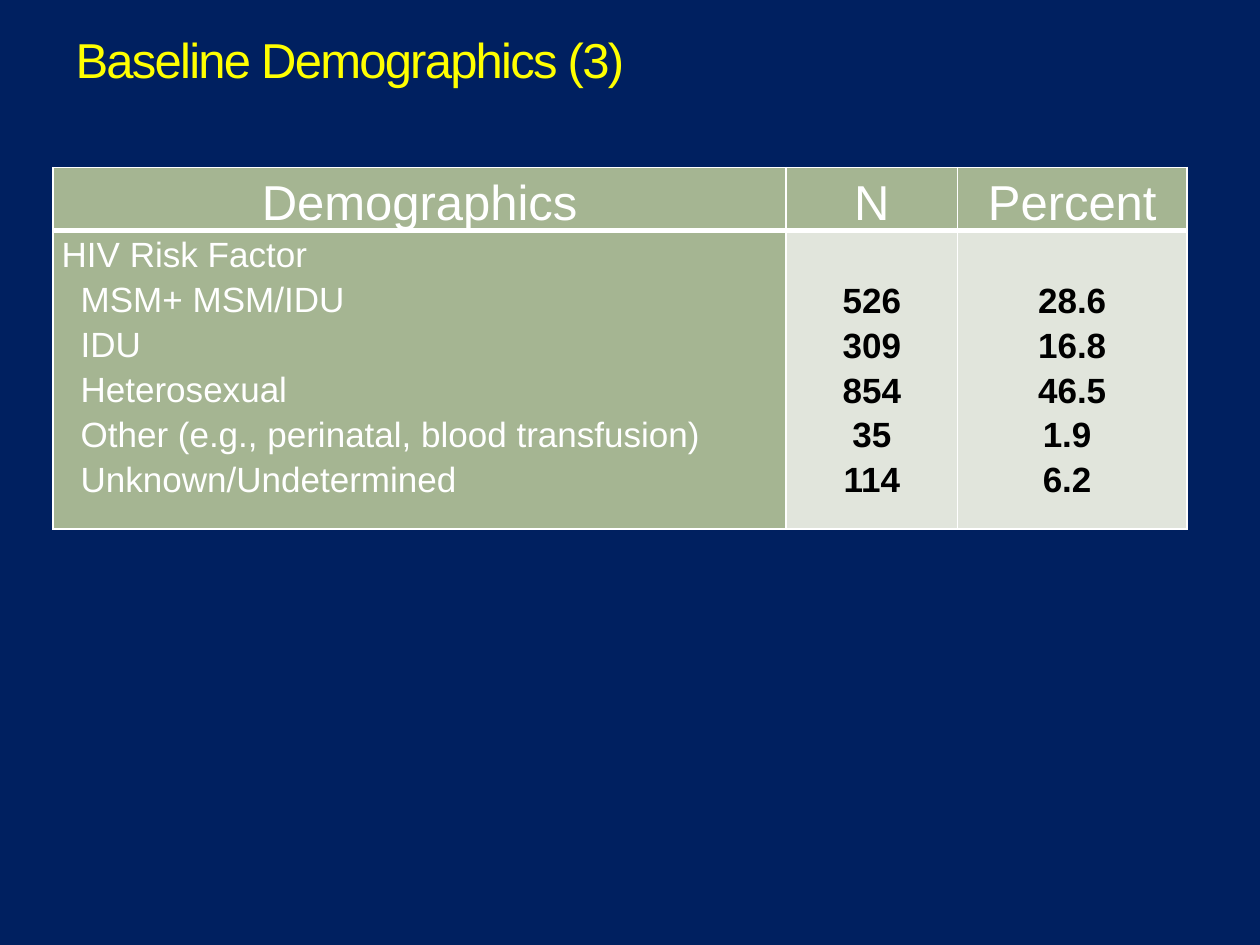
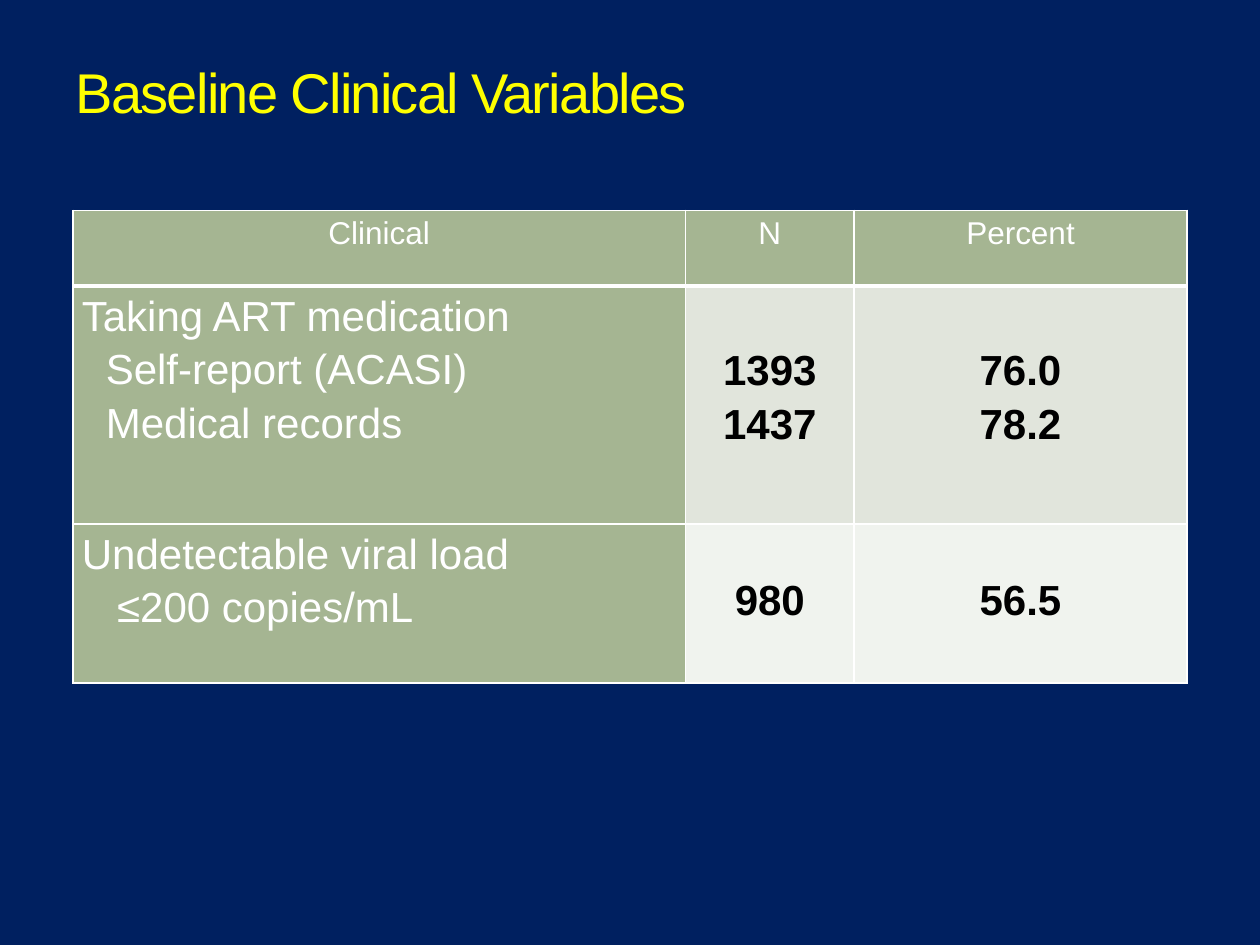
import dataclasses

import lxml.etree
import pptx
import pptx.dml.color
import pptx.enum.text
import pptx.oxml.ns
import pptx.util

Inches = pptx.util.Inches
ALIGN = pptx.enum.text.PP_ALIGN
TITLE_ONLY = 5


@dataclasses.dataclass(frozen=True)
class Theme:
    font: str = "Arial"
    back: str = "002060"
    title: str = "FFFF00"
    head: str = "A5B592"
    bands: tuple = ("E1E5DC", "F0F3EE")
    light: str = "FFFFFF"
    dark: str = "000000"
    thin: float = 1
    thick: float = 3
    leading: float = 1.15
    inset: float = 0.07


THEME = Theme()


def color(code):
    return pptx.dml.color.RGBColor.from_string(code)


def write(frame, lines, size, ink, bold=False, align=ALIGN.LEFT,
          indent=0, leading=None, track=0):
    """Fill a frame; lines after the first are indented, track is in points."""
    for i, line in enumerate(lines):
        para = frame.paragraphs[0] if i == 0 else frame.add_paragraph()
        para.alignment = align
        para.line_spacing = leading
        if i and indent:
            para._p.get_or_add_pPr().set("marL", str(Inches(indent)))
        run = para.add_run()
        run.text = line
        run.font.name = THEME.font
        run.font.size = pptx.util.Pt(size)
        run.font.bold = bold
        run.font.color.rgb = color(ink)
        if track:
            run.font._element.set("spc", str(track * 100))


def border(cell, base):
    """Draw white lines round a cell; base is the width of the lower one."""
    props = cell._tc.get_or_add_tcPr()
    for side in "LRTB":
        width = base if side == "B" else THEME.thin
        line = lxml.etree.SubElement(
            props, pptx.oxml.ns.qn(f"a:ln{side}"), w=str(pptx.util.Pt(width)))
        fill = lxml.etree.SubElement(line, pptx.oxml.ns.qn("a:solidFill"))
        lxml.etree.SubElement(
            fill, pptx.oxml.ns.qn("a:srgbClr"), val=THEME.light)


def style(cell, fill, top=0, base=THEME.thin):
    border(cell, base)
    cell.fill.solid()
    cell.fill.fore_color.rgb = color(fill)
    cell.margin_left = cell.margin_right = Inches(THEME.inset)
    cell.margin_top, cell.margin_bottom = Inches(top), 0


def add_slide(deck, title, size, height):
    slide = deck.slides.add_slide(deck.slide_layouts[TITLE_ONLY])
    box = slide.shapes.title
    box.left, box.top = Inches(0.5), Inches(0.17)
    box.width, box.height = Inches(9), Inches(height)
    box.text_frame.vertical_anchor = pptx.enum.text.MSO_ANCHOR.BOTTOM
    write(box.text_frame, [title], size, THEME.title, track=-1)
    return slide


def add_grid(slide, left, top, widths, heights, heads, groups,
             head_size, size):
    """Each group holds labels, counts, shares, label indent and number drop."""
    grid = slide.shapes.add_table(
        len(heights), len(widths), Inches(left), Inches(top),
        Inches(sum(widths)), Inches(sum(heights))).table
    for col, width in zip(grid.columns, widths):
        col.width = Inches(width)
    for row, height in zip(grid.rows, heights):
        row.height = Inches(height)
    for c, head in enumerate(heads):
        cell = grid.cell(0, c)
        style(cell, THEME.head, base=THEME.thick)
        write(cell.text_frame, [head], head_size, THEME.light,
              align=ALIGN.CENTER, leading=THEME.leading)
    for r, (labels, counts, shares, indent, drop) in enumerate(groups, 1):
        cell = grid.cell(r, 0)
        style(cell, THEME.head)
        write(cell.text_frame, labels, size, THEME.light,
              indent=indent, leading=THEME.leading)
        for c, values in enumerate((counts, shares), 1):
            cell = grid.cell(r, c)
            style(cell, THEME.bands[(r - 1) % 2], top=drop)
            write(cell.text_frame, values, size, THEME.dark, bold=True,
                  align=ALIGN.CENTER, leading=THEME.leading)
    return grid


def add_risk(deck):
    slide = add_slide(deck, "Baseline Demographics (3)", 28, 0.58)
    risk = (
        ["HIV Risk Factor", "MSM+ MSM/IDU", "IDU", "Heterosexual",
         "Other (e.g., perinatal, blood transfusion)",
         "Unknown/Undetermined"],
        ["526", "309", "854", "35", "114"],
        ["28.6", "16.8", "46.5", "1.9", "6.2"], 0.15, 0.36)
    grid = add_grid(slide, 0.42, 1.33, [5.82, 1.36, 1.82], [0.47, 2.37],
                    ["Demographics", "N", "Percent"], [risk], 28, 20)
    other = grid.cell(1, 2).text_frame.paragraphs[3]
    other._p.get_or_add_pPr().set("marR", str(Inches(0.08)))


def add_clinic(deck):
    slide = add_slide(deck, "Baseline Clinical Variables", 32, 0.87)
    groups = [
        (["Taking ART medication", "Self-report (ACASI)", "Medical records"],
         ["1393", "1437"], ["76.0", "78.2"], 0.19, 0.43),
        (["Undetectable viral load", "≤200 copies/mL"],
         ["980"], ["56.5"], 0.28, 0.37),
    ]
    add_grid(slide, 0.58, 1.67, [4.86, 1.34, 2.64], [0.6, 1.89, 1.26],
             ["Clinical", "N", "Percent"], groups, 18, 24)


def main():
    deck = pptx.Presentation()
    deck.slide_width, deck.slide_height = Inches(10), Inches(7.5)
    back = deck.slide_master.background.fill
    back.solid()
    back.fore_color.rgb = color(THEME.back)
    add_risk(deck)
    add_clinic(deck)
    deck.save("out.pptx")


if __name__ == "__main__":
    main()
